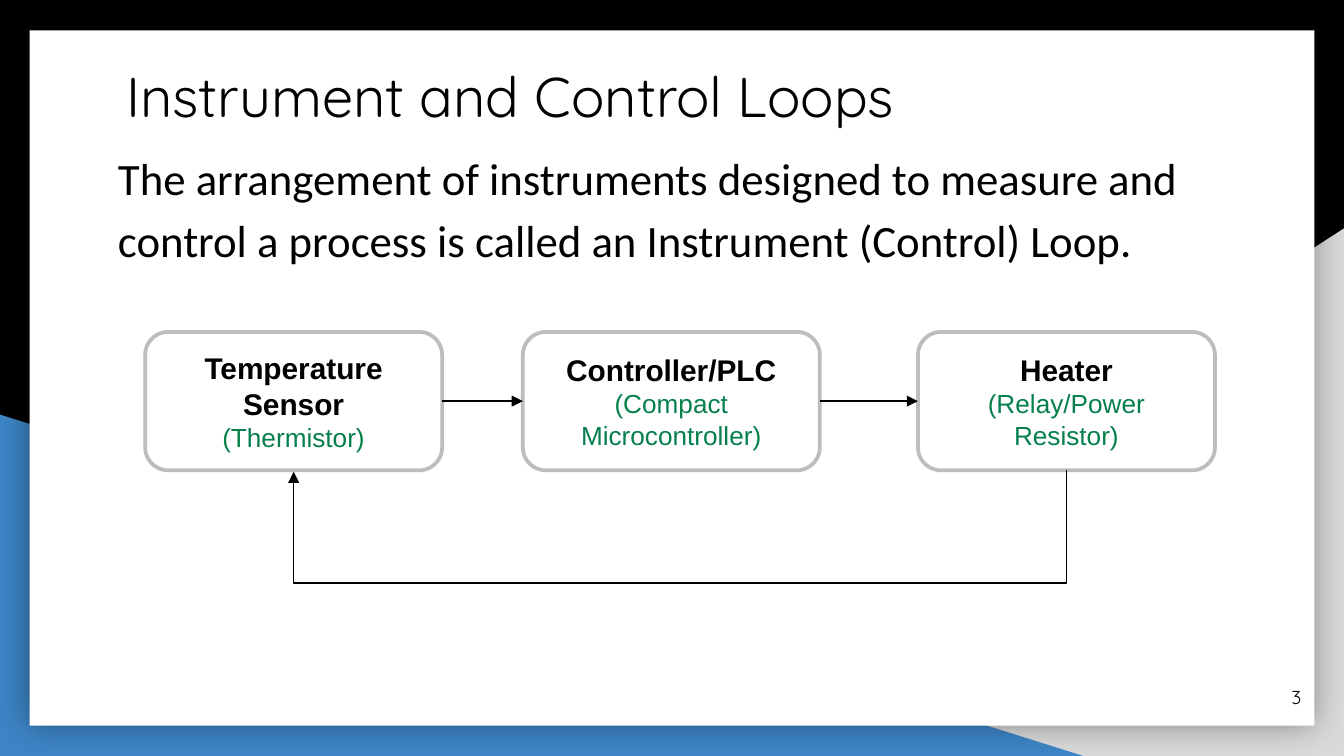
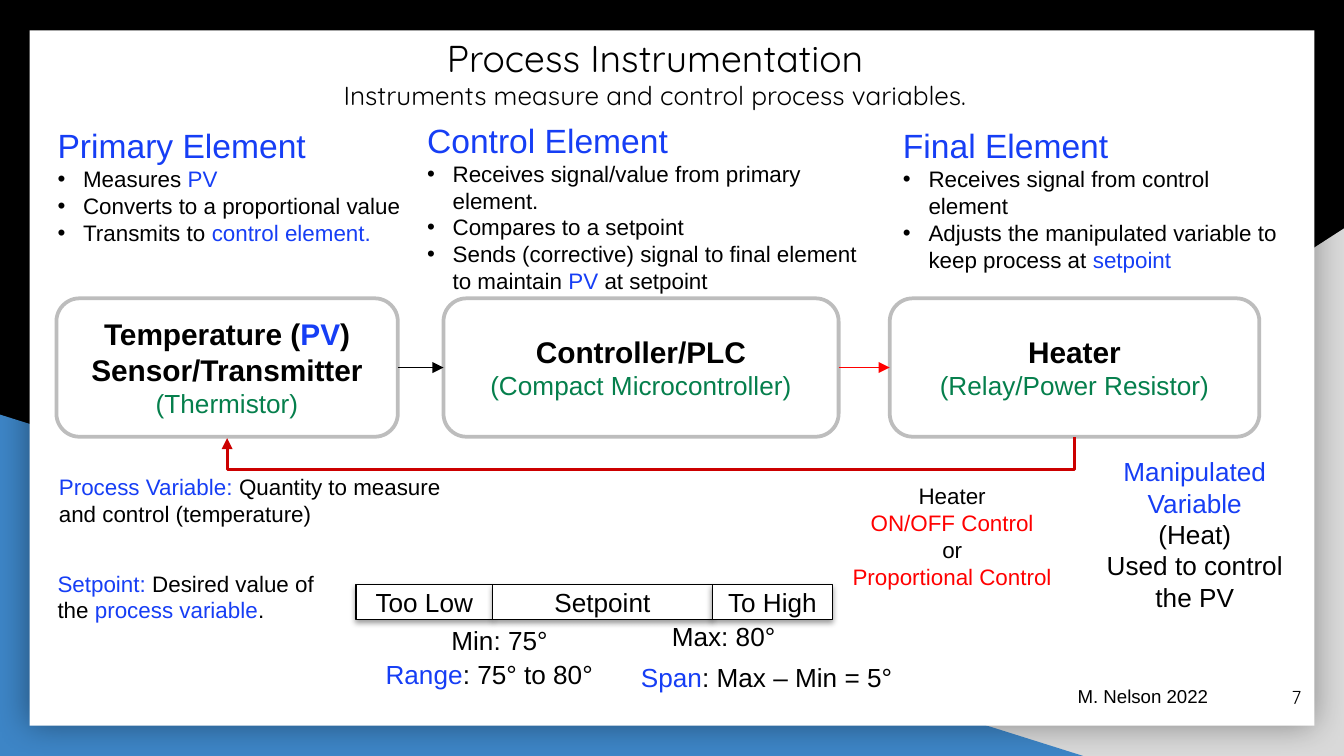
import pptx
import pptx.dml.color
import pptx.enum.shapes
import pptx.enum.text
import pptx.oxml.ns
import pptx.util
from lxml import etree

PX = 4572  # EMU in one px, 200 px to the inch
SLIDE_WIDTH, SLIDE_HEIGHT = 2000, 1125
STAGE_HEIGHT = 206
BULLET_INDENT = 38

COLOURS = {
    "black": "000000",
    "white": "FFFFFF",
    "light grey": "D9D9D9",
    "outline grey": "BDBDBD",
    "band blue": "3D85C6",
    "blue": "163EF5",
    "green": "057F4C",
    "red": "FF0000",
    "dark red": "CC0000",
}

SHAPE = pptx.enum.shapes.MSO_SHAPE
CONNECTOR = pptx.enum.shapes.MSO_CONNECTOR
ALIGN = pptx.enum.text.PP_ALIGN
ANCHOR = pptx.enum.text.MSO_ANCHOR
qn = pptx.oxml.ns.qn


def emu(px):
    return pptx.util.Emu(round(px * PX))


def rgb(colour):
    return pptx.dml.color.RGBColor.from_string(COLOURS[colour])


def add_node(parent, tag, **attributes):
    return etree.SubElement(parent, qn(tag), {key: str(value) for key, value in attributes.items()})


def line(*spans, size=12, font="Arial", bold=False, align=ALIGN.LEFT, bullet=False,
         indent=0, spacing=None):
    """Describe a paragraph; a span is black text, a (text, colour[, size]) tuple or a line break."""
    return dict(spans=spans, size=size, font=font, bold=bold, align=align, bullet=bullet,
                indent=indent, spacing=spacing)


def centred(*spans, **style):
    return line(*spans, align=ALIGN.CENTER, **style)


def bullets(heading, *items):
    return [line((heading, "blue"), size=18)] + [line(*item, bullet=True) for item in items]


def stage_text(name, example):
    return [centred(*name, size=16, bold=True), centred((example, "green"), size=14)]


class Deck:
    """Holds the shared style and the slide being filled."""

    def __init__(self):
        self.deck = pptx.Presentation()
        self.deck.slide_width = emu(SLIDE_WIDTH)
        self.deck.slide_height = emu(SLIDE_HEIGHT)
        self.page = None

    def new_page(self, number):
        self.page = self.deck.slides.add_slide(self.deck.slide_layouts[6])
        fill = self.page.background.fill
        fill.solid()
        fill.fore_color.rgb = rgb("black")
        right_band = self.shape(SHAPE.RIGHT_TRIANGLE, 784, 340, 1216, 785, "light grey")
        right_band.element.spPr.find(qn("a:xfrm")).set("flipH", "1")
        self.shape(SHAPE.RIGHT_TRIANGLE, 0, 617, 1612, 508, "band blue")
        sheet = self.shape(SHAPE.RECTANGLE, 44, 45, 1912, 1035, "white")
        self.shadow(sheet, blur=18, distance=0, opacity=40)
        self.text(1836, 994, 120, 86, [line(str(number), size=10, font="Quicksand", align=ALIGN.RIGHT)],
                  inset=20, anchor=ANCHOR.MIDDLE)

    def fill_text(self, box, lines, anchor, inset=10, wrap=True):
        frame = box.text_frame
        frame.word_wrap = wrap
        frame.vertical_anchor = anchor
        frame.margin_left = frame.margin_right = emu(20)
        frame.margin_top = frame.margin_bottom = emu(inset)
        for index, style in enumerate(lines):
            para = frame.add_paragraph() if index else frame.paragraphs[0]
            self.paragraph(para, style)

    def paragraph(self, para, style):
        para.alignment = style["align"]
        para.line_spacing = style["spacing"]
        properties = para._p.get_or_add_pPr()
        if style["bullet"]:
            properties.set("marL", str(emu(BULLET_INDENT)))
            properties.set("indent", str(-emu(BULLET_INDENT)))
            add_node(add_node(properties, "a:buClr"), "a:srgbClr", val=COLOURS["black"])
            add_node(properties, "a:buFont", typeface="Arial")
            add_node(properties, "a:buChar", char="•")
        elif style["indent"]:
            properties.set("marL", str(emu(style["indent"])))
        para.font.name = style["font"]
        para.font.size = pptx.util.Pt(style["size"])
        para.font.bold = style["bold"]
        spans = [(span, "black") if isinstance(span, str) else span for span in style["spans"]]
        colours = {span[1] for span in spans}
        if len(colours) == 1:
            para.font.color.rgb = rgb(spans[0][1])
        for text, colour, *size in spans:
            if text == "\n":
                para.add_line_break()
                continue
            run = para.add_run()
            run.text = text
            if len(colours) > 1:
                run.font.color.rgb = rgb(colour)
            if size:
                run.font.size = pptx.util.Pt(size[0])

    def text(self, left, top, width, height, lines, inset=10, anchor=ANCHOR.TOP, wrap=True):
        box = self.page.shapes.add_textbox(emu(left), emu(top), emu(width), emu(height))
        self.fill_text(box, lines, anchor, inset, wrap)

    def title(self, left, top, width, height, paragraph):
        self.text(left, top, width, height, [paragraph], inset=20)

    def shape(self, kind, left, top, width, height, fill, outline=None, weight=0.75, lines=()):
        shape = self.page.shapes.add_shape(kind, emu(left), emu(top), emu(width), emu(height))
        shape.shadow.inherit = False
        shape.fill.solid()
        shape.fill.fore_color.rgb = rgb(fill)
        if outline:
            shape.line.color.rgb = rgb(outline)
            shape.line.width = pptx.util.Pt(weight)
        else:
            shape.line.fill.background()
        self.fill_text(shape, lines, ANCHOR.MIDDLE)
        return shape

    def shadow(self, shape, blur, distance, opacity):
        """Drop a black shadow straight down; blur and distance are in points."""
        effects = shape.element.spPr.find(qn("a:effectLst"))
        outer = add_node(effects, "a:outerShdw", blurRad=pptx.util.Pt(blur), dist=pptx.util.Pt(distance),
                         dir=5400000, algn="bl", rotWithShape=0)
        add_node(add_node(outer, "a:srgbClr", val=COLOURS["black"]), "a:alpha", val=opacity * 1000)

    def arrow(self, start, end, colour="black", weight=0.75, kind=CONNECTOR.STRAIGHT):
        arrow = self.page.shapes.add_connector(kind, *map(emu, start + end))
        arrow.line.color.rgb = rgb(colour)
        arrow.line.width = pptx.util.Pt(weight)
        properties = arrow.element.spPr
        add_node(properties.find(qn("a:ln")), "a:tailEnd", type="triangle")
        add_node(properties, "a:effectLst")
        return arrow

    def feedback(self, start_x, end_x, y, drop, colour, weight):
        """Run an arrow down from start_x, left, and back up to end_x."""
        rise, run = 2, start_x - end_x
        left, top = (start_x + end_x - rise) / 2, y + (rise - run) / 2
        # An elbow starts sideways, so it is turned a quarter to start downwards.
        arrow = self.arrow((left, top), (left + rise, top + run), colour, weight, CONNECTOR.ELBOW)
        properties = arrow.element.spPr
        properties.find(qn("a:xfrm")).set("rot", "5400000")
        guides = properties.find(qn("a:prstGeom")).find(qn("a:avLst"))
        add_node(guides, "a:gd", name="adj1", fmla=f"val {drop * 100000 // rise}")

    def control_loop(self, top, stages, arrow_colours, drop, feedback_colour, feedback_weight):
        """Draw (left, width, lines) stages, the arrows between them and the way back."""
        for left, width, lines in stages:
            self.shape(SHAPE.FLOWCHART_ALTERNATE_PROCESS, left, top, width, STAGE_HEIGHT,
                       "white", "outline grey", 2, lines)
        middle = top + STAGE_HEIGHT // 2
        for (left, width, _), following, colour in zip(stages, stages[1:], arrow_colours):
            self.arrow((left + width, middle), (following[0], middle), colour)
        first, last = (left + width // 2 for left, width, _ in (stages[0], stages[-1]))
        self.feedback(last, first, top + STAGE_HEIGHT, drop, feedback_colour, feedback_weight)


CONTROLLER = stage_text(["Controller/PLC"], "(Compact Microcontroller)")
HEATER = stage_text(["Heater"], "(Relay/Power Resistor)")


def build_loops(deck):
    deck.new_page(3)
    deck.title(168, 72, 1642, 134, line("Instrument and Control Loops", size=30, font="Quicksand"))
    deck.text(126, 192, 1760, 778, [
        line("The arrangement of instruments designed to measure and control a process "
             "is called an Instrument (Control) Loop.",
             size=24, font="Calibri", indent=30, spacing=1.15)], inset=20)
    sensor = stage_text(["Temperature Sensor"], "(Thermistor)")
    stages = [(216, 442, sensor), (778, 442, CONTROLLER), (1366, 442, HEATER)]
    deck.control_loop(494, stages, ["black", "black"], 170, "black", 0.75)


def build_instrumentation(deck):
    deck.new_page(7)
    deck.title(154, 32, 1642, 118, centred(
        "Process Instrumentation", "\n",
        ("Instruments measure and control process variables.", "black", 14),
        size=20, font="Quicksand"))

    sensor = stage_text(["Temperature (", ("PV", "blue"), ") Sensor/Transmitter"], "(Thermistor)")
    stages = [(84, 508, sensor), (660, 588, CONTROLLER), (1324, 550, HEATER)]
    deck.control_loop(444, stages, ["black", "red"], 50, "dark red", 1.5)

    deck.text(66, 176, 578, 208, bullets(
        "Primary Element",
        ["Measures ", ("PV", "blue")],
        ["Converts to a proportional value"],
        ["Transmits to ", ("control element.", "blue")]))
    deck.text(616, 168, 708, 282, bullets(
        "Control Element",
        ["Receives signal/value from primary element."],
        ["Compares to a setpoint"],
        ["Sends (corrective) signal to final element to maintain ", ("PV", "blue"), " at setpoint"]))
    deck.text(1324, 176, 616, 242, bullets(
        "Final Element",
        ["Receives signal from control element"],
        ["Adjusts the manipulated variable to keep process at ", ("setpoint", "blue")]))

    deck.text(1232, 708, 370, 182, [centred(span) for span in (
        "Heater", ("ON/OFF Control", "red"), "or", ("Proportional Control", "red"))])
    deck.text(1624, 668, 308, 256, [centred(span, size=14) for span in (
        ("Manipulated", "blue"), ("Variable", "blue"), "(Heat)", "Used to control the PV")])
    deck.text(68, 694, 628, 100, [
        line(("Process Variable: ", "blue"), "Quantity to measure and control (temperature)")])
    deck.text(66, 838, 464, 100, [
        line(("Setpoint: ", "blue"), "Desired value of the ", ("process variable", "blue"), ".")])

    left = 530
    for label, width in (("Too Low", 203), ("Setpoint", 327), ("To High", 179)):
        zone = deck.shape(SHAPE.RECTANGLE, left, 870, width, 52, "white", "black",
                          lines=[centred(label, size=14)])
        deck.shadow(zone, blur=3.1, distance=1.6, opacity=38)
        left += width

    for left, top, width, spans in (
            (652, 920, 184, ["Min: 75°"]),
            (980, 914, 222, ["Max: 80°"]),
            (554, 970, 350, [("Range", "blue"), ": 75° to 80°"]),
            (934, 974, 416, [("Span", "blue"), ": Max – Min = 5°"])):
        deck.text(left, top, width, 68, [line(*spans, size=14)], wrap=False)
    deck.text(1584, 1010, 236, 54, [line("M. Nelson 2022", size=10)], wrap=False)


def main():
    deck = Deck()
    build_loops(deck)
    build_instrumentation(deck)
    deck.deck.save("out.pptx")


if __name__ == "__main__":
    main()
